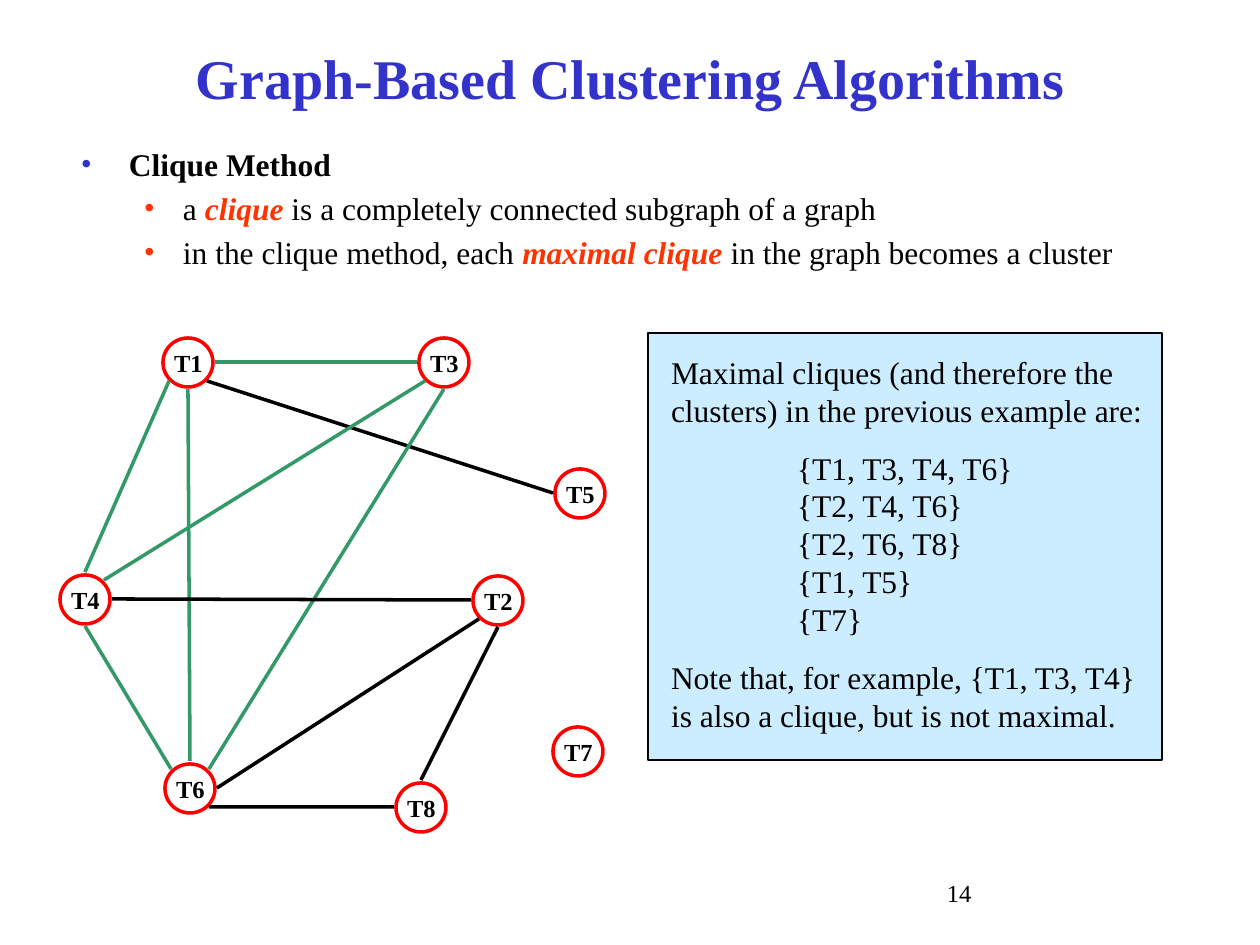
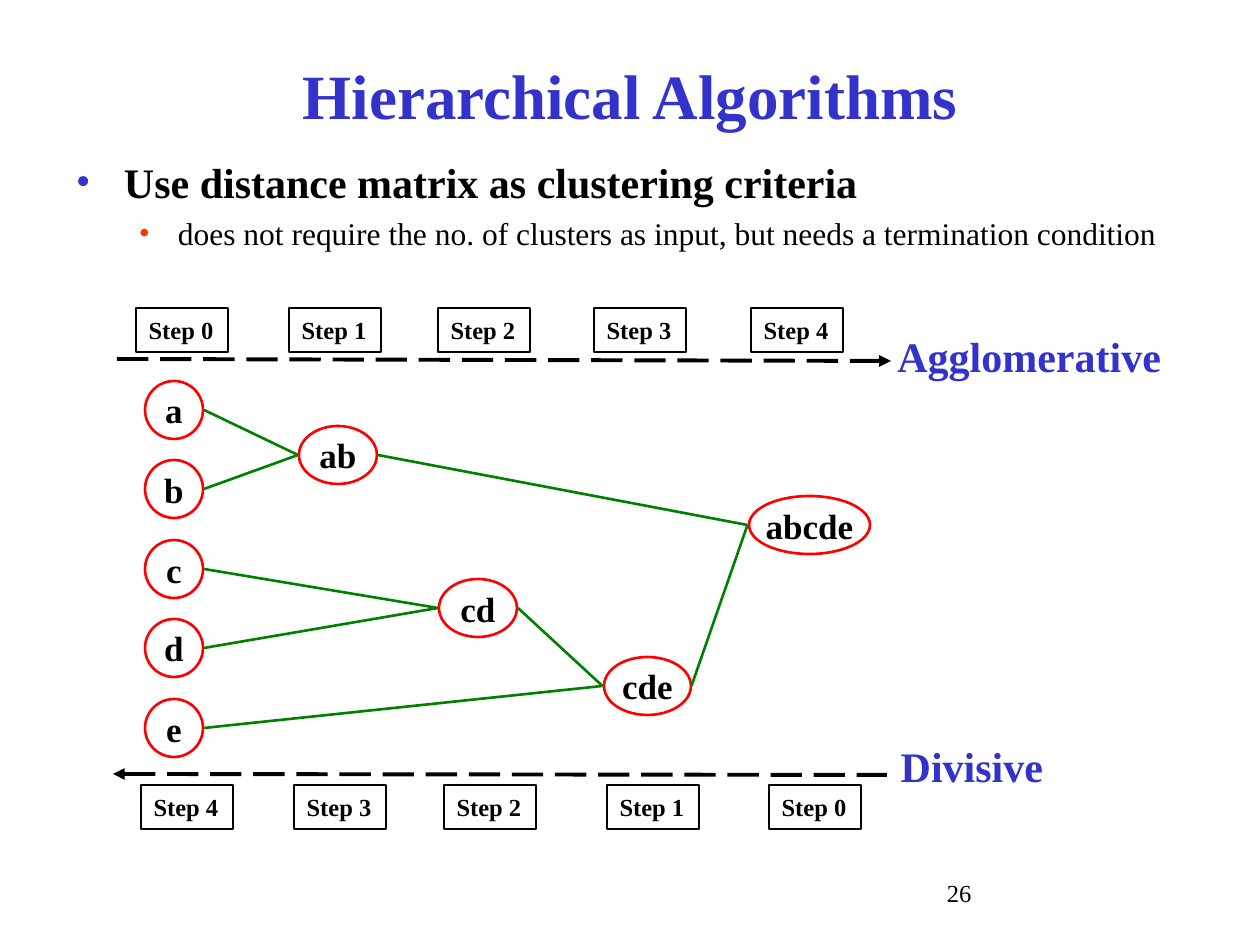
from lxml import etree
from pptx import Presentation
from pptx.dml.color import RGBColor
from pptx.enum.dml import MSO_LINE
from pptx.enum.shapes import MSO_CONNECTOR, MSO_SHAPE
from pptx.enum.text import MSO_ANCHOR, PP_ALIGN
from pptx.oxml.ns import qn
from pptx.util import Pt

PX = 7257  # EMU in one px, 126 px to the inch
FONT = "Times New Roman"
BLACK, BLUE, ORANGE, RED = "000000", "3333CC", "FF3300", "FF0000"
GREEN, DARK_GREEN, PALE_BLUE = "339966", "008000", "CCECFF"
STRAIGHT = MSO_CONNECTOR.STRAIGHT
OVAL, RECTANGLE = MSO_SHAPE.OVAL, MSO_SHAPE.RECTANGLE
LEFT, CENTER, RIGHT = PP_ALIGN.LEFT, PP_ALIGN.CENTER, PP_ALIGN.RIGHT
TOP, MIDDLE = MSO_ANCHOR.TOP, MSO_ANCHOR.MIDDLE
LONG_DASH = MSO_LINE.LONG_DASH
rgb = RGBColor.from_string


def put_text(page, frame, paras, kind=None, fill=None, outline=None, weight=1,
             anchor=TOP, wrap=True, insets=(13, 6, 13, 6), **shared):
    """Add a text box, or a shape of the given kind, holding (text, format) paragraphs.

    Words between asterisks are emphasised; shared holds the default format.
    """
    frame = [length * PX for length in frame]
    if kind is None:
        box = page.shapes.add_textbox(*frame)
    else:
        box = page.shapes.add_shape(kind, *frame)
        box.shadow.inherit = False
        box.line.color.rgb = rgb(outline)
        box.line.width = Pt(weight)
        if fill:
            box.fill.solid()
            box.fill.fore_color.rgb = rgb(fill)
        else:
            box.fill.background()
    body = box.text_frame
    body.word_wrap = wrap
    body.vertical_anchor = anchor
    body.margin_left, body.margin_top, body.margin_right, body.margin_bottom = (
        inset * PX for inset in insets)
    for number, (text, own) in enumerate(paras):
        style = {"size": 18, "bold": False, "color": BLACK, "align": LEFT,
                 "before": 0, "left": 0, "hang": 0, "bullet": None, **shared, **own}
        para = body.add_paragraph() if number else body.paragraphs[0]
        para.alignment = style["align"]
        para.space_before = Pt(style["before"])
        properties = para._p.get_or_add_pPr()
        properties.set("marL", str(style["left"] * PX))
        properties.set("indent", str(-style["hang"] * PX))
        if style["bullet"]:
            tint = etree.SubElement(properties, qn("a:buClr"))
            etree.SubElement(tint, qn("a:srgbClr"), val=style["bullet"])
            etree.SubElement(properties, qn("a:buFont"), typeface=FONT)
            etree.SubElement(properties, qn("a:buChar"), char="•")
        for part, words in enumerate(text.split("*")):
            emphasised = part % 2 == 1
            span = para.add_run()
            span.text = words
            span.font.name = FONT
            span.font.size = Pt(style["size"])
            span.font.bold = style["bold"] or emphasised
            span.font.italic = emphasised
            span.font.color.rgb = rgb(ORANGE if emphasised else style["color"])


def draw_line(page, start, end, color, weight, arrow=None):
    """Draw a line; arrow names the end with a head and makes the line dashed."""
    ends = [round(place * PX) for place in (*start, *end)]
    line = page.shapes.add_connector(STRAIGHT, *ends)
    line.line.color.rgb = rgb(color)
    line.line.width = Pt(weight)
    if arrow:
        line.line.dash_style = LONG_DASH
        etree.SubElement(line.line._get_or_add_ln(), qn(arrow), type="triangle")
    etree.SubElement(line._element.spPr, qn("a:effectLst"))


deck = Presentation()
deck.slide_width, deck.slide_height = 1260 * PX, 945 * PX
blank = deck.slide_layouts[6]

# Title, bullets and page number of both slides
topic = {"bold": True, "left": 48, "hang": 48, "bullet": BLUE, "before": 4}
detail = {"left": 102, "hang": 39, "bullet": ORANGE, "before": 3.6}
outlines = [
    ("Graph-Based Clustering Algorithms", 32, 71, "14", (68, 139, 1097, 165), [
        ("Clique Method", topic),
        ("a *clique* is a completely connected subgraph of a graph", detail),
        ("in the clique method, each *maximal clique* in the graph becomes a cluster",
         detail)]),
    ("Hierarchical Algorithms", 36, 105, "26", (63, 150, 1134, 120), [
        ("Use distance matrix as clustering criteria",
         {**topic, "size": 24, "before": 5}),
        ("does not require the no. of clusters as input, but needs a termination condition",
         {**detail, "before": 4.5})]),
]
pages = []
for title, title_size, title_height, page_number, frame, bullets in outlines:
    page = deck.slides.add_slide(blank)
    put_text(page, (95, 42, 1071, title_height), [(title, {})], anchor=MIDDLE,
             size=title_size, bold=True, color=BLUE, align=CENTER)
    put_text(page, frame, bullets)
    put_text(page, (934, 872, 262, 32), [(page_number, {})], size=14)
    pages.append(page)
clique_page, hierarchy_page = pages

# Clique graph: node centres, and edges between compass points of the nodes
graph_nodes = {"T1": (188, 362), "T3": (444, 362), "T5": (580, 493), "T4": (85, 599),
               "T2": (498, 600), "T7": (578, 751), "T6": (190, 788), "T8": (421, 807)}
compass = {"n": (0, -1), "s": (0, 1), "e": (1, 0), "w": (-1, 0), "ne": (0.7, -0.7),
           "nw": (-0.7, -0.7), "se": (0.7, 0.7), "sw": (-0.7, 0.7)}
graph_edges = [
    ("T1", "sw", "T4", "n", GREEN), ("T1", "e", "T3", "w", GREEN),
    ("T1", "s", "T6", "n", GREEN), ("T1", "se", "T5", "w", BLACK),
    ("T3", "sw", "T4", "ne", GREEN), ("T4", "s", "T6", "nw", GREEN),
    ("T3", "s", "T6", "ne", GREEN), ("T4", "e", "T2", "w", BLACK),
    ("T2", "s", "T8", "n", BLACK), ("T6", "se", "T8", "w", BLACK),
    ("T2", "sw", "T6", "e", BLACK)]
reach = 27
for name, (x, y) in graph_nodes.items():
    put_text(clique_page, (x - 25, y - 24, 50, 49), [(name, {})], OVAL, outline=RED,
             weight=2, anchor=MIDDLE, wrap=False, insets=(1, 1, 0, 0),
             size=14, bold=True, align=CENTER)
for first, first_side, second, second_side, color in graph_edges:
    start, end = (
        [place + reach * step for place, step in zip(graph_nodes[name], compass[side])]
        for name, side in ((first, first_side), (second, second_side)))
    draw_line(clique_page, start, end, color, 2)

# Panel listing the maximal cliques
cliques = ["{T1, T3, T4, T6}", "{T2, T4, T6}", "{T2, T6, T8}", "{T1, T5}", "{T7}"]
panel = [("Maximal cliques (and therefore the clusters) in the previous example are:", {})]
panel += [(clique, {"left": 126, "before": 0 if number else 11.5})
          for number, clique in enumerate(cliques)]
panel.append(("Note that, for example, {T1, T3, T4} is also a clique, but is not maximal.",
              {"before": 11.5}))
put_text(clique_page, (648, 333, 514, 427), panel, RECTANGLE, fill=PALE_BLUE,
         outline=BLACK, insets=(23, 20, 7, 6))

# Cluster tree: centre and width of each node
tree_nodes = {letter: (174, 410 + 318 * row // 4, 58)
              for row, letter in enumerate("abcde")}
tree_nodes.update({"ab": (338, 455, 78), "cd": (478, 608, 78),
                   "cde": (647, 686, 87), "abcde": (809, 525, 121)})
merges = {"ab": ("a", "b"), "cd": ("c", "d"), "cde": ("cd", "e"), "abcde": ("ab", "cde")}
for name, (x, y, width) in tree_nodes.items():
    put_text(hierarchy_page, (x - width // 2, y - 29, width, 58), [(name, {})], OVAL,
             outline=RED, weight=1.5, anchor=MIDDLE, wrap=False,
             size=20, bold=True, align=CENTER)
for merged, members in merges.items():
    x, y, width = tree_nodes[merged]
    for member in members:
        member_x, member_y, member_width = tree_nodes[member]
        draw_line(hierarchy_page, (member_x + member_width / 2 + 1, member_y),
                  (x - width / 2 - 1, y), DARK_GREEN, 1.5)

# Step rows with their direction arrows
step_rows = [(308, (136, 289, 438, 594, 751), range(5)),
             (785, (141, 294, 444, 607, 769), range(4, -1, -1))]
for top, lefts, steps in step_rows:
    for left, step in zip(lefts, steps):
        put_text(hierarchy_page, (left, top, 92, 44), [(f"Step {step}", {})], RECTANGLE,
                 outline=BLACK, anchor=MIDDLE, wrap=False, insets=(0, 6, 2, 6),
                 size=14, bold=True, align=CENTER)
directions = [("Agglomerative", (885, 325, 289, 63), (117, 359), (891, 361), "a:tailEnd"),
              ("Divisive", (888, 735, 168, 63), (113, 774), (887, 775), "a:headEnd")]
for label, frame, start, end, arrow in directions:
    draw_line(hierarchy_page, start, end, BLACK, 2.25, arrow)
    put_text(hierarchy_page, frame, [(label, {})], wrap=False, insets=(0, 6, 13, 6),
             size=24, bold=True, color=BLUE, align=RIGHT)

deck.save("out.pptx")
